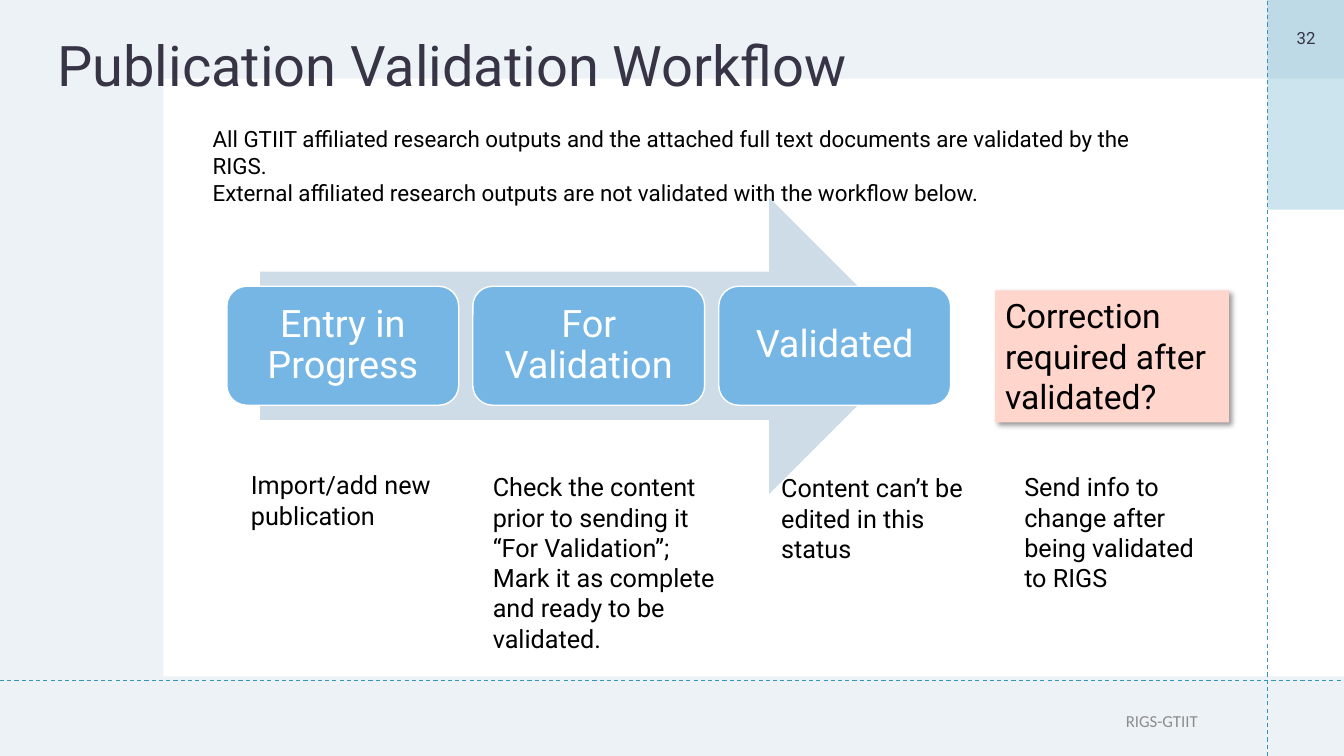
"""Build the publication validation workflow slide."""
from dataclasses import dataclass, field

from lxml.etree import SubElement
from pptx import Presentation
from pptx.dml.color import RGBColor
from pptx.enum.dml import MSO_LINE
from pptx.enum.shapes import MSO_CONNECTOR, MSO_SHAPE
from pptx.enum.text import MSO_ANCHOR, PP_ALIGN
from pptx.oxml.ns import qn
from pptx.util import Inches, Pt

WIDTH, HEIGHT = Inches(13.33), Inches(7.5)
COLORS = {
    "mist": "CEDBE6", "arrow": "CEDCE7", "white": "FFFFFF", "teal": "3494BA",
    "step": "75B6E5", "pink": "FFD5CC", "ink": "373545", "black": "000000",
    "grey": "8C8C8C",
}
STEP_LEFT, STEP_PITCH = 16.88, 18.3


@dataclass
class Box:
    """A rectangle in percent of the slide's width and height."""
    left: float
    top: float
    width: float
    height: float

    def emu(self) -> list[int]:
        """Return left, top, width and height in EMU."""
        sizes = (WIDTH, HEIGHT, WIDTH, HEIGHT)
        shares = (self.left, self.top, self.width, self.height)
        return [round(size * share / 100) for size, share in zip(sizes, shares)]


@dataclass
class Text:
    """Paragraphs with their font, paragraph and frame formats."""
    lines: list[str]
    size: float
    color: str = "black"
    name: str = "Roboto"
    para: dict = field(default_factory=lambda: {"alignment": PP_ALIGN.LEFT})
    frame: dict = field(default_factory=lambda: {"vertical_anchor": MSO_ANCHOR.TOP})


@dataclass
class Block:
    """A preset shape, or a text box when no kind is given."""
    box: Box
    kind: MSO_SHAPE | None = None
    fill: str = "white"
    alpha: int = 100
    outline: str | None = None
    shadow: bool = False
    text: Text | None = None


@dataclass
class Rule:
    """A dashed line between two points in percent of the slide."""
    x1: float
    y1: float
    x2: float
    y2: float


def rgb(name: str) -> RGBColor:
    """Look up a named colour."""
    return RGBColor.from_string(COLORS[name])


def apply(target, formats: dict) -> None:
    """Set every format value on the target."""
    for key, value in formats.items():
        setattr(target, key, value)


def set_alpha(color_element, percent: int) -> None:
    """Give a colour element an opacity."""
    SubElement(color_element, qn("a:alpha"), val=str(percent * 1000))


def add_shadow(s) -> None:
    """Give a shape a soft shadow to the lower right."""
    effects = s._element.spPr.find(qn("a:effectLst"))
    outer = SubElement(effects, qn("a:outerShdw"), blurRad=str(Pt(4)),
                       dist=str(Pt(3)), dir=str(45 * 60000), algn="tl",
                       rotWithShape="0")
    set_alpha(SubElement(outer, qn("a:srgbClr"), val=COLORS["black"]), 40)


def write(tf, text: Text) -> None:
    """Fill a text frame with formatted paragraphs."""
    apply(tf, {"word_wrap": True, **text.frame})
    for i, line in enumerate(text.lines):
        p = tf.add_paragraph() if i else tf.paragraphs[0]
        apply(p, text.para)
        r = p.add_run()
        r.text = line
        apply(r.font, {"size": Pt(text.size), "name": text.name})
        r.font.color.rgb = rgb(text.color)


def draw_block(shapes, block: Block) -> None:
    """Draw a shape or a text box."""
    if block.kind is None:
        s = shapes.add_textbox(*block.box.emu())
    else:
        s = shapes.add_shape(block.kind, *block.box.emu())
        s.shadow.inherit = False
        s.fill.solid()
        s.fill.fore_color.rgb = rgb(block.fill)
        if block.alpha < 100:
            set_alpha(s._element.spPr.find(f".//{qn('a:srgbClr')}"), block.alpha)
        if block.outline:
            s.line.color.rgb = rgb(block.outline)
            s.line.width = Pt(1)
        else:
            s.line.fill.background()
        if block.shadow:
            add_shadow(s)
    if block.text:
        write(s.text_frame, block.text)


def draw_rule(shapes, rule: Rule) -> None:
    """Draw a dashed line."""
    ends = Box(rule.x1, rule.y1, rule.x2, rule.y2).emu()
    s = shapes.add_connector(MSO_CONNECTOR.STRAIGHT, *ends)
    apply(s.line, {"width": Pt(0.75), "dash_style": MSO_LINE.DASH})
    s.line.color.rgb = rgb("teal")
    SubElement(s._element.spPr, qn("a:effectLst"))


MIDDLE = {"vertical_anchor": MSO_ANCHOR.MIDDLE}
CENTER = {"alignment": PP_ALIGN.CENTER}
STEP_FRAME = MIDDLE | {f"margin_{side}": Inches(0.11)
                       for side in ("left", "top", "right", "bottom")}

BACKDROP = [
    Block(Box(0, 0, 100, 100), MSO_SHAPE.RECTANGLE, "mist", 35),
    Block(Box(12.15, 10.4, 87.85, 79.07), MSO_SHAPE.RECTANGLE),
    Block(Box(94.3, 0, 5.7, 27.73), MSO_SHAPE.RECTANGLE, "teal", 25),
]
RULES = [Rule(94.3, 100, 94.3, 0), Rule(0, 90, 100, 90)]
HEADINGS = [
    Block(Box(3.53, 1.73, 86.5, 14.53),
          text=Text(["Publication Validation Workflow"], 40, "ink",
                    para={"line_spacing": 0.9}, frame=MIDDLE)),
    Block(Box(94.37, 0, 5.63, 10),
          text=Text(["32"], 12, "ink", para=CENTER, frame=MIDDLE)),
    Block(Box(15.08, 15.87, 71.57, 8.53), text=Text([
        "All GTIIT affiliated research outputs and the attached full text "
        "documents are validated by the RIGS.",
        "External affiliated research outputs are not validated with the "
        "workflow below."], 16)),
]
ARROW = Block(Box(19.35, 26.13, 48.91, 39.2), MSO_SHAPE.RIGHT_ARROW, "arrow")
STEPS = [
    Block(Box(STEP_LEFT + i * STEP_PITCH, 37.87, 17.25, 15.73),
          MSO_SHAPE.ROUNDED_RECTANGLE, "step", outline="white",
          text=Text([label], 27, "white", para=CENTER | {"line_spacing": 0.9},
                    frame=STEP_FRAME))
    for i, label in enumerate(["Entry in Progress", "For Validation", "Validated"])
]
NOTES = [
    Block(box, text=Text(lines, 18)) for box, lines in [
        (Box(17.93, 61.47, 15.23, 9.47), ["Import/add new publication"]),
        (Box(35.93, 61.73, 18.6, 25.6),
         ["Check the content prior to sending it “For Validation”;",
          "Mark it as complete and ready to be validated."]),
        (Box(57.39, 61.87, 15.23, 13.47), ["Content can’t be edited in this status"]),
        (Box(75.47, 61.73, 15.23, 13.47),
         ["Send info to change after being validated to RIGS"]),
    ]
]
CORRECTION = Block(Box(74.04, 38.4, 17.4, 17.47), MSO_SHAPE.RECTANGLE, "pink",
                   shadow=True,
                   text=Text(["Correction required after validated?"], 24))
FOOTER = Block(Box(30.83, 90.67, 59.04, 9.33),
               text=Text(["RIGS-GTIIT"], 12, "grey", "Calibri",
                         {"alignment": PP_ALIGN.RIGHT}, MIDDLE))


def main() -> None:
    """Build and save the presentation."""
    prs = Presentation()
    apply(prs, {"slide_width": WIDTH, "slide_height": HEIGHT})
    shapes = prs.slides.add_slide(prs.slide_layouts[6]).shapes
    for block in BACKDROP:
        draw_block(shapes, block)
    for rule in RULES:
        draw_rule(shapes, rule)
    for block in [*HEADINGS, ARROW, *STEPS, *NOTES, CORRECTION, FOOTER]:
        draw_block(shapes, block)
    prs.save("out.pptx")


if __name__ == "__main__":
    main()
